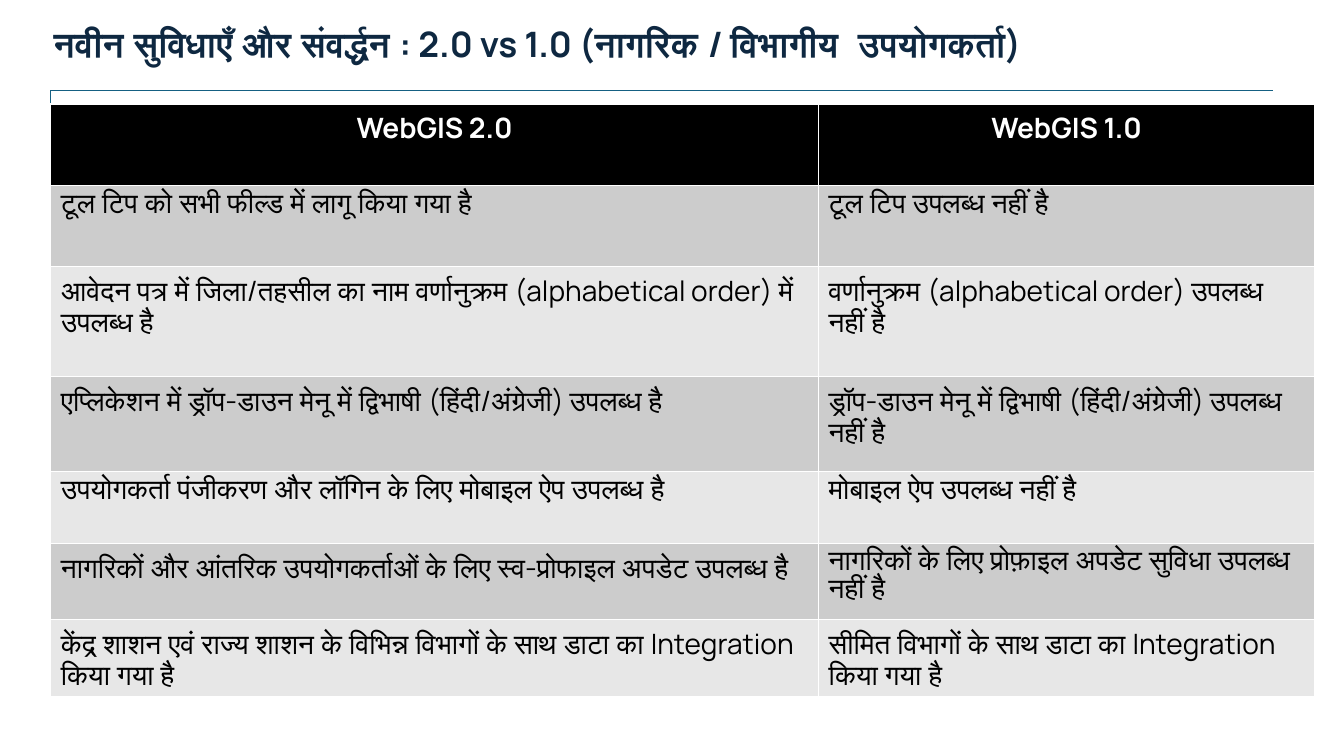
from dataclasses import dataclass

from pptx import Presentation
from pptx.dml.color import RGBColor as Rgb
from pptx.enum.shapes import MSO_CONNECTOR as Link
from pptx.enum.text import MSO_ANCHOR as Anchor, PP_ALIGN as Align
from pptx.oxml.ns import qn
from pptx.util import Cm, Pt
from lxml.etree import SubElement


@dataclass
class Theme:
    font: str = "Manrope"
    navy: Rgb = Rgb(0x0E, 0x28, 0x41)
    teal: Rgb = Rgb(0x15, 0x60, 0x82)
    black: Rgb = Rgb(0, 0, 0)
    white: Rgb = Rgb(255, 255, 255)
    bands: tuple = (Rgb(0xE7, 0xE7, 0xE7), Rgb(0xCC, 0xCC, 0xCC))
    title: Pt = Pt(25)
    body: Pt = Pt(20)


theme = Theme()


def style(para, size, color, bold):
    for run in para.runs:
        font = run.font
        font.name, font.size, font.bold = theme.font, size, bold
        font.color.rgb = color


deck = Presentation()
deck.slide_width, deck.slide_height = Cm(33.87), Cm(19.05)
slide = deck.slides.add_slide(deck.slide_layouts[5])

# Title
title = slide.shapes.title
title.left, title.top, title.width, title.height = Cm(1.35), Cm(0.05), Cm(31.62), Cm(1.45)
frame = title.text_frame
frame.text = "नवीन सुविधाएँ और संवर्द्धन : 2.0 vs 1.0 (नागरिक / विभागीय  उपयोगकर्ता)"
frame.margin_left = frame.margin_top = frame.margin_right = frame.margin_bottom = 0
frame.vertical_anchor = Anchor.TOP
head = frame.paragraphs[0]
head.alignment = Align.LEFT
head.line_spacing = 1.5
style(head, theme.title, theme.navy, True)

# Bent rule below the title
rule = slide.shapes.add_connector(Link.ELBOW, Cm(1.28), Cm(2.64), Cm(32.08), Cm(2.29))
rule.line.color.rgb = theme.teal
rule.line.width = Pt(0.75)
props = rule._element.spPr
SubElement(props, qn("a:effectLst"))
bend = props.find(qn("a:prstGeom")).get_or_add_avLst()
SubElement(bend, qn("a:gd"), name="adj1", fmla="val 0")

# Comparison table
rows = [
    ("WebGIS 2.0", "WebGIS 1.0"),
    ("टूल टिप को सभी फील्ड में लागू किया गया है", "टूल टिप उपलब्ध नहीं है"),
    ("आवेदन पत्र में जिला/तहसील का नाम वर्णानुक्रम (alphabetical order) में उपलब्ध है",
     "वर्णानुक्रम (alphabetical order) उपलब्ध नहीं है"),
    ("एप्लिकेशन में ड्रॉप-डाउन मेनू में द्विभाषी (हिंदी/अंग्रेजी) उपलब्ध है",
     "ड्रॉप-डाउन मेनू में द्विभाषी (हिंदी/अंग्रेजी) उपलब्ध नहीं है"),
    ("उपयोगकर्ता पंजीकरण और लॉगिन के लिए मोबाइल ऐप उपलब्ध है", "मोबाइल ऐप उपलब्ध नहीं है"),
    ("नागरिकों और आंतरिक उपयोगकर्ताओं के लिए स्व-प्रोफाइल अपडेट उपलब्ध है",
     "नागरिकों के लिए प्रोफ़ाइल अपडेट सुविधा उपलब्ध नहीं है"),
    ("केंद्र शाशन एवं राज्य शाशन के विभिन्न विभागों के साथ डाटा का Integration किया गया है",
     "सीमित विभागों के साथ डाटा का Integration किया गया है"),
]
widths = (19.35, 12.5)
heights = (2.06, 2.03, 2.77, 2.41, 1.8, 1.93, 1.93)
table = slide.shapes.add_table(len(rows), len(widths), Cm(1.28), Cm(2.62),
                               Cm(sum(widths)), Cm(sum(heights))).table
for col, width in zip(table.columns, widths):
    col.width = Cm(width)
for i, (texts, height) in enumerate(zip(rows, heights)):
    table.rows[i].height = Cm(height)
    top = i == 0
    for j, text in enumerate(texts):
        cell = table.cell(i, j)
        cell.text_frame.text = text
        cell.fill.solid()
        cell.fill.fore_color.rgb = theme.black if top else theme.bands[i % 2]
        para = cell.text_frame.paragraphs[0]
        para.alignment = Align.CENTER if top else Align.LEFT
        style(para, theme.body, theme.white if top else theme.black, top)

deck.save("out.pptx")
